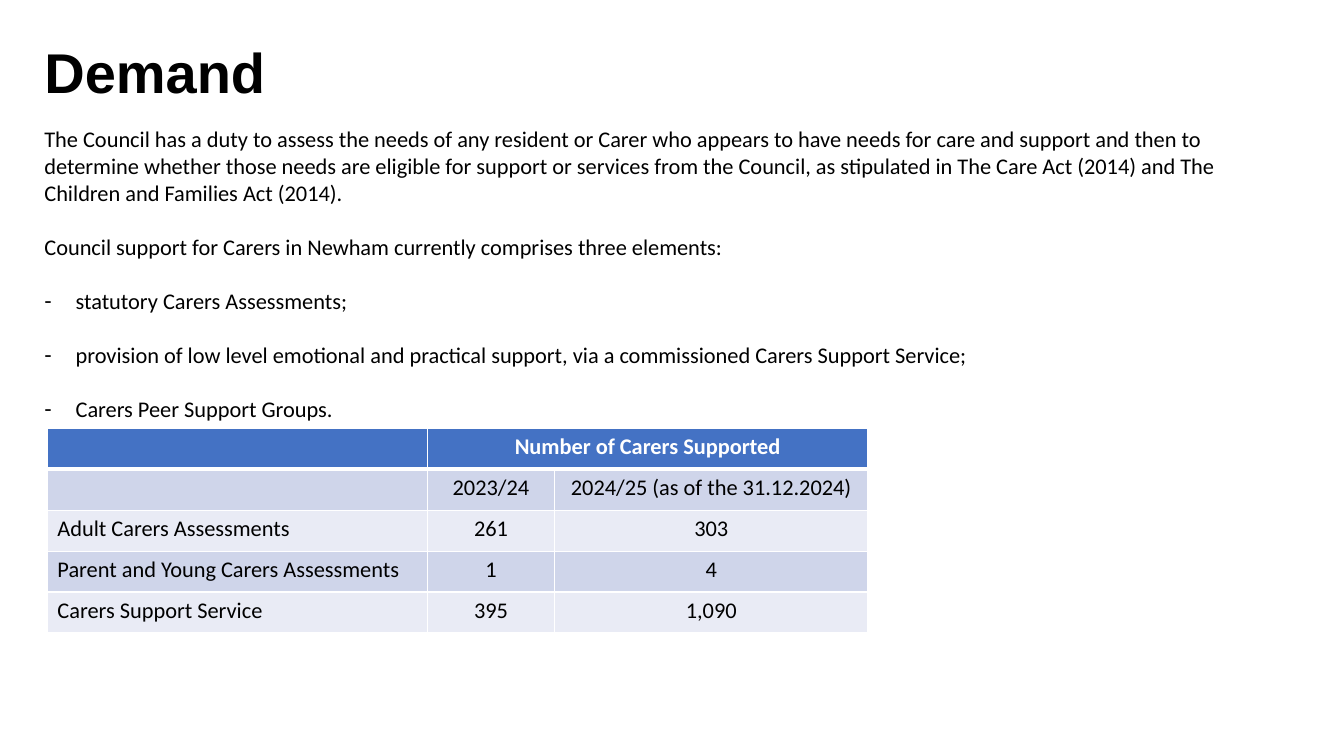
import pptx
import pptx.util
import pptx.dml.color
import pptx.enum.text
import pptx.oxml
import pptx.oxml.ns

Inches = pptx.util.Inches
Pt = pptx.util.Pt
ALIGN = pptx.enum.text.PP_ALIGN
ANCHOR = pptx.enum.text.MSO_ANCHOR


def rgb(value):
    return pptx.dml.color.RGBColor.from_string(value)


def write(p, text, font="Calibri", size=16, color="000000", bold=False,
          align=ALIGN.LEFT, before=0, spacing=1.0):
    p.alignment = align
    p.space_before = Pt(before)
    p.space_after = Pt(0)
    p.line_spacing = spacing
    r = p.add_run()
    r.text = text
    r.font.name = font
    r.font.size = Pt(size)
    r.font.bold = bold
    r.font.color.rgb = rgb(color)


prs = pptx.Presentation()
prs.slide_width = Inches(13.33)
prs.slide_height = Inches(7.5)
s = prs.slides.add_slide(prs.slide_layouts[1])
title, body = s.placeholders

title.left, title.top = Inches(0.34), Inches(0)
title.width, title.height = Inches(10.34), Inches(1.1)
tf = title.text_frame
tf.auto_size = pptx.enum.text.MSO_AUTO_SIZE.NONE
tf.vertical_anchor = ANCHOR.BOTTOM
write(tf.paragraphs[0], "Demand", font="Arial", size=40, bold=True, spacing=0.9)

body.left, body.top = Inches(0.34), Inches(1.19)
body.width, body.height = Inches(12.39), Inches(3.06)
tf = body.text_frame
tf.word_wrap = True
tf.auto_size = pptx.enum.text.MSO_AUTO_SIZE.NONE
tf.vertical_anchor = ANCHOR.TOP
lines = [
    ("The Council has a duty to assess the needs of any resident or Carer who appears to have "
     "needs for care and support and then to determine whether those needs are eligible for "
     "support or services from the Council, as stipulated in The Care Act (2014) and The "
     "Children and Families Act (2014).", False),
    ("Council support for Carers in Newham currently comprises three elements:", False),
    ("statutory Carers Assessments;", True),
    ("provision of low level emotional and practical support, via a commissioned Carers "
     "Support Service;", True),
    ("Carers Peer Support Groups.", True),
]
for i, (text, dashed) in enumerate(lines):
    p = tf.paragraphs[0] if i == 0 else tf.add_paragraph()
    pPr = p._p.get_or_add_pPr()
    indent = Inches(0.31) if dashed else 0
    pPr.set("marL", str(indent))
    pPr.set("indent", str(-indent))
    bullet = '<a:buChar %s char="-"/>' if dashed else "<a:buNone %s/>"
    pPr.append(pptx.oxml.parse_xml(bullet % pptx.oxml.ns.nsdecls("a")))
    write(p, text, before=19.5 if i else 0)

rows = [
    ("", "Number of Carers Supported", ""),
    ("", "2023/24", "2024/25 (as of the 31.12.2024)"),
    ("Adult Carers Assessments", "261", "303"),
    ("Parent and Young Carers Assessments", "1", "4"),
    ("Carers Support Service", "395", "1,090"),
]
widths = [3.77, 1.26, 3.11]
table = s.shapes.add_table(len(rows), len(widths), Inches(0.47), Inches(4.25),
                           Inches(sum(widths)), Inches(2.03)).table
for column, width in zip(table.columns, widths):
    column.width = Inches(width)
table.cell(0, 1).merge(table.cell(0, 2))
for i, row in enumerate(rows):
    header = i == 0
    for j, text in enumerate(row):
        cell = table.cell(i, j)
        cell.vertical_anchor = ANCHOR.TOP
        tcPr = cell._tc.get_or_add_tcPr()
        for side in "LRTB":
            thick = (header and side == "B") or (i == 1 and side == "T")
            tcPr.append(pptx.oxml.parse_xml(
                '<a:ln%s %s w="%d"><a:solidFill><a:srgbClr val="FFFFFF"/></a:solidFill></a:ln%s>'
                % (side, pptx.oxml.ns.nsdecls("a"), Pt(3 if thick else 1), side)))
        cell.fill.solid()
        cell.fill.fore_color.rgb = rgb("4472C4" if header else "CFD5EA" if i % 2 else "E9EBF5")
        if text:
            write(cell.text_frame.paragraphs[0], text, bold=header,
                  color="FFFFFF" if header else "000000",
                  align=ALIGN.CENTER if j else ALIGN.LEFT)

prs.save("out.pptx")
